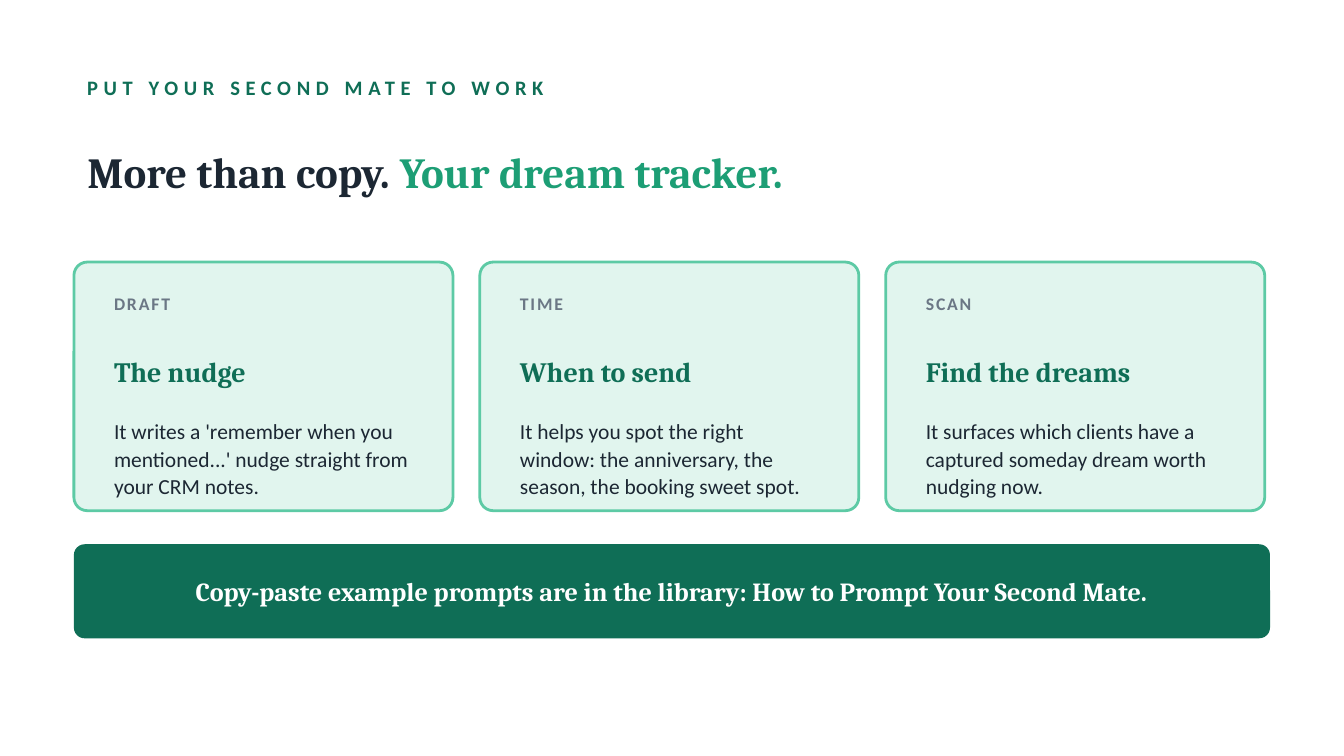
from pptx import Presentation
from pptx.dml.color import RGBColor
from pptx.enum.shapes import MSO_SHAPE
from pptx.enum.text import MSO_ANCHOR, MSO_AUTO_SIZE, PP_ALIGN
from pptx.util import Inches, Pt

ROUND = MSO_SHAPE.ROUNDED_RECTANGLE
MIDDLE = MSO_ANCHOR.MIDDLE
FIXED = MSO_AUTO_SIZE.NONE
LEFT, CENTER = PP_ALIGN.LEFT, PP_ALIGN.CENTER

COLORS = {
    "ink": "1C2733", "deep": "0F6E56", "green": "1D9E75", "mint": "5DCAA5",
    "pale": "E1F5EE", "gray": "6B7785", "white": "FFFFFF",
}
STYLES = {
    "kicker": {"name": "Calibri", "size": Pt(11), "bold": True},
    "title": {"name": "Cambria", "size": Pt(23), "bold": True},
    "label": {"name": "Calibri", "size": Pt(9.5), "bold": True},
    "head": {"name": "Cambria", "size": Pt(15), "bold": True},
    "body": {"name": "Calibri", "size": Pt(11.5), "bold": False},
    "banner": {"name": "Cambria", "size": Pt(14), "bold": True},
}
CARDS = [
    ("DRAFT", "The nudge",
     "It writes a 'remember when you mentioned...' nudge straight from your CRM notes."),
    ("TIME", "When to send",
     "It helps you spot the right window: the anniversary, the season, the booking sweet spot."),
    ("SCAN", "Find the dreams",
     "It surfaces which clients have a captured someday dream worth nudging now."),
]


def color(key):
    """Return the named colour."""
    return RGBColor.from_string(COLORS[key])


def fill_text(shape, style, runs, align=LEFT, track=0, lines=None):
    """Write coloured runs as one paragraph in a shape."""
    frame = shape.text_frame
    frame.word_wrap = True
    frame.auto_size = FIXED
    frame.vertical_anchor = MIDDLE
    para = frame.paragraphs[0]
    para.alignment = align
    para.line_spacing = lines
    for text, tint in runs:
        run = para.add_run()
        run.text = text
        for key, value in STYLES[style].items():
            setattr(run.font, key, value)
        run.font.color.rgb = color(tint)
        if track:
            run._r.get_or_add_rPr().set("spc", str(track * 100))


def add_text(slide, box, style, text, tint, **form):
    """Add a text box with one run."""
    shape = slide.shapes.add_textbox(*map(Inches, box))
    fill_text(shape, style, [(text, tint)], **form)


def add_panel(slide, box, fill, radius, line=None):
    """Add a rounded panel, outlined if a line colour is given."""
    panel = slide.shapes.add_shape(ROUND, *map(Inches, box))
    panel.adjustments[0] = radius / min(box[2:])
    panel.shadow.inherit = False
    panel.fill.solid()
    panel.fill.fore_color.rgb = color(fill)
    if line:
        panel.line.color.rgb = color(line)
        panel.line.width = Pt(1.5)
    else:
        panel.line.fill.background()


def add_header(slide, box):
    """Place the kicker and the two-tone title."""
    left, top, width, height = box
    add_text(slide, (left, top, width, 0.3), "kicker",
             "PUT YOUR SECOND MATE TO WORK", "deep", track=3)
    title = slide.shapes.title
    place = {"left": left, "top": top + 0.35, "width": width, "height": height - 0.35}
    for key, value in place.items():
        setattr(title, key, Inches(value))
    fill_text(title, "title", [("More than copy. ", "ink"), ("Your dream tracker.", "green")])


def add_card(slide, box, label, head, body):
    """Place a card with its label, heading and body."""
    left, top, width, height = box
    add_panel(slide, box, "pale", 0.1, "mint")
    inner, span = left + 0.2, width - 0.37
    add_text(slide, (inner, top + 0.16, span, 0.3), "label", label, "gray", track=1)
    add_text(slide, (inner, top + 0.46, span, 0.7), "head", head, "deep")
    add_text(slide, (inner, top + 1.18, span, 0.55), "body", body, "ink", lines=1.08)


def add_banner(slide, box):
    """Place the closing banner."""
    left, top, width, height = box
    add_panel(slide, box, "deep", 0.08)
    add_text(slide, (left + 0.25, top, width - 0.5, height), "banner",
             "Copy-paste example prompts are in the library: How to Prompt Your Second Mate.",
             "white", align=CENTER)


def main():
    """Build and save the slide."""
    deck = Presentation()
    deck.slide_width = Inches(10)
    deck.slide_height = deck.slide_width * 9 // 16
    slide = deck.slides.add_slide(deck.slide_layouts[5])
    left, width, card, gap = 0.55, 8.9, 2.82, 0.2
    add_header(slide, (left, 0.5, width, 1.2))
    for index, texts in enumerate(CARDS):
        add_card(slide, (left + index * (card + gap), 1.95, card, 1.85), *texts)
    add_banner(slide, (left, 4.05, width, 0.7))
    deck.save("out.pptx")


if __name__ == "__main__":
    main()
